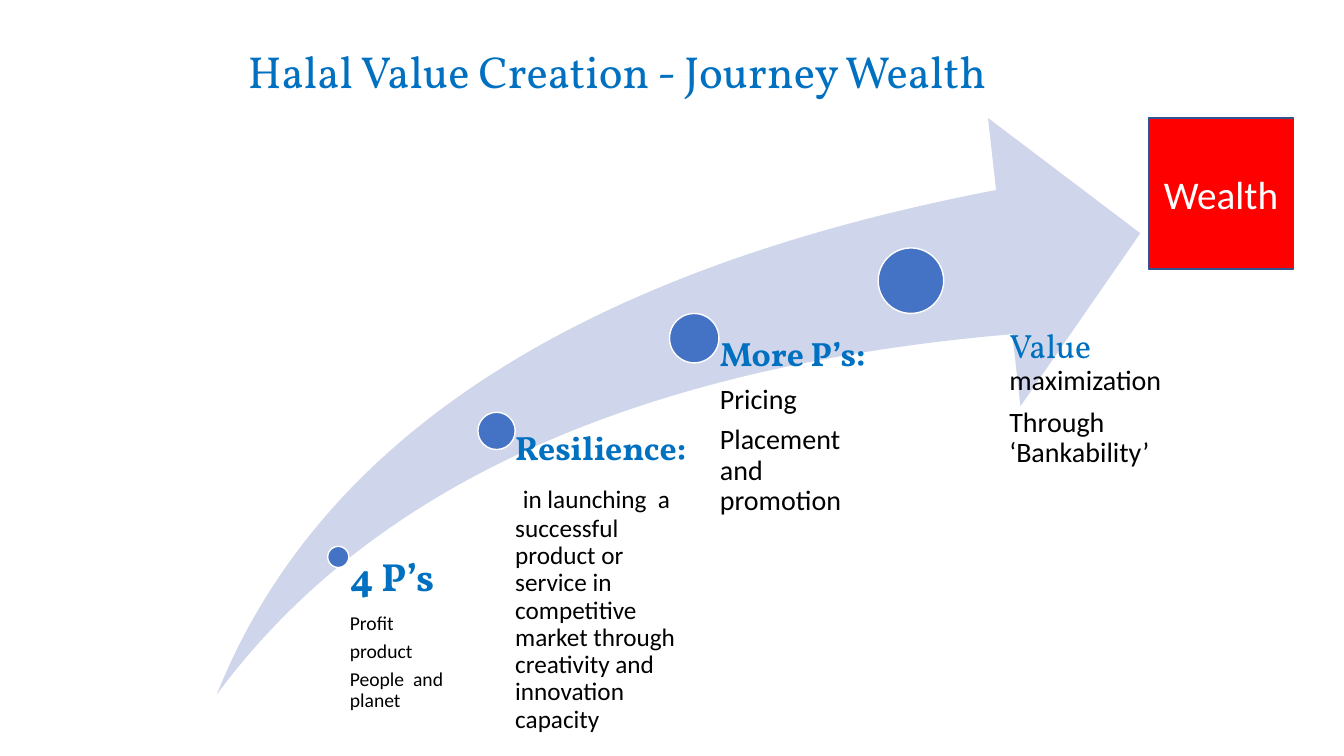
from lxml import etree
from pptx import Presentation
from pptx.dml.color import RGBColor
from pptx.enum.shapes import MSO_SHAPE
from pptx.enum.text import MSO_ANCHOR, MSO_AUTO_SIZE, PP_ALIGN
from pptx.oxml.ns import qn
from pptx.util import Inches, Pt

ARROW = MSO_SHAPE.SWOOSH_ARROW
CIRCLE = MSO_SHAPE.OVAL
RECTANGLE = MSO_SHAPE.RECTANGLE
MIDDLE = MSO_ANCHOR.MIDDLE
CENTER = PP_ALIGN.CENTER
GROW = MSO_AUTO_SIZE.SHAPE_TO_FIT_TEXT

COLORS = {
    "arrow": "CFD5EA",
    "marker": "4472C4",
    "heading": "0070C0",
    "body": "000000",
    "white": "FFFFFF",
    "wealth": "FF0000",
    "wealth_line": "325491",
}
HEADING_FONT = "Vollkorn"
BODY_FONT = "Calibri"


def color(name):
    return RGBColor.from_string(COLORS[name])


def heading(text, size, bold=True):
    return text, dict(size=size, font=HEADING_FONT, fill="heading", bold=bold)


def body(text, size):
    return text, dict(size=size)


STAGES = [
    dict(marker=(3.25, 5.42, 0.21), box=(3.36, 5.53, 1.57, 1.36), inset=0.11,
         paras=[[heading("4 P’s", 28)], [body("Profit", 14)],
                [body("product", 14)], [body("People  and planet", 14)]]),
    dict(marker=(4.74, 4.09, 0.37), box=(4.92, 4.28, 1.92, 2.62), inset=0.19,
         paras=[[heading("Resilience:", 24)],
                [body(" ", 24),
                 body("in launching  a successful product or service in competitive "
                      "market through creativity and innovation capacity", 18)]]),
    dict(marker=(6.64, 3.11, 0.49), box=(6.88, 3.35, 1.92, 3.54), inset=0.26,
         paras=[[heading("More P’s:", 24)], [body("Pricing", 20)],
                [body("Placement and promotion", 20)]]),
    dict(marker=(8.71, 2.46, 0.65), box=(9.67, 3.27, 1.92, 2.51), inset=0.34,
         paras=[[heading("Value", 24, bold=False), body(" maximization", 20)],
                [body("Through ‘Bankability’", 20)]]),
]


def add_span(para, text, size=18, font=BODY_FONT, fill="body", bold=False):
    span = para.add_run()
    span.text = text
    span.font.size = Pt(size)
    span.font.name = font
    span.font.bold = bold
    span.font.color.rgb = color(fill)


def add_shape(page, kind, place, fill, line=None):
    shape = page.shapes.add_shape(kind, *map(Inches, place))
    shape.shadow.inherit = False
    shape.fill.solid()
    shape.fill.fore_color.rgb = color(fill)
    if line:
        shape.line.color.rgb = color(line)
        shape.line.width = Pt(1)
    else:
        shape.line.fill.background()
    return shape


def set_stage_spacing(para):
    para.line_spacing = 0.9
    after = etree.SubElement(para._p.get_or_add_pPr(), qn("a:spcAft"))
    etree.SubElement(after, qn("a:spcPct")).set("val", "35000")


def add_stage(page, marker, box, inset, paras):
    left, top, diameter = marker
    add_shape(page, CIRCLE, (left, top, diameter, diameter), "marker", "white")
    frame = page.shapes.add_textbox(*map(Inches, box)).text_frame
    frame.word_wrap = True
    frame.margin_left = Inches(inset)
    frame.margin_top = frame.margin_right = frame.margin_bottom = 0
    for index, spans in enumerate(paras):
        para = frame.add_paragraph() if index else frame.paragraphs[0]
        set_stage_spacing(para)
        for text, style in spans:
            add_span(para, text, **style)


def add_title(page):
    place = map(Inches, (2.36, 0.38, 7.88, 0.64))
    frame = page.shapes.add_textbox(*place).text_frame
    frame.word_wrap = False
    frame.auto_size = GROW
    text, style = heading("Halal Value Creation - Journey Wealth", 32, bold=False)
    add_span(frame.paragraphs[0], text, **style)


def add_wealth(page):
    shape = add_shape(page, RECTANGLE, (11.39, 1.17, 1.44, 1.5), "wealth", "wealth_line")
    frame = shape.text_frame
    frame.vertical_anchor = MIDDLE
    para = frame.paragraphs[0]
    para.alignment = CENTER
    add_span(para, "Wealth", size=28, fill="white")


def main():
    deck = Presentation()
    deck.slide_width = Inches(13.33)
    deck.slide_height = Inches(7.5)
    page = deck.slides.add_slide(deck.slide_layouts[6])
    arrow = add_shape(page, ARROW, (2.15, 1.17, 9.16, 5.72), "arrow")
    arrow.adjustments[0] = 0.25
    arrow.adjustments[1] = 0.25
    for stage in STAGES:
        add_stage(page, **stage)
    add_title(page)
    add_wealth(page)
    deck.save("out.pptx")


if __name__ == "__main__":
    main()
